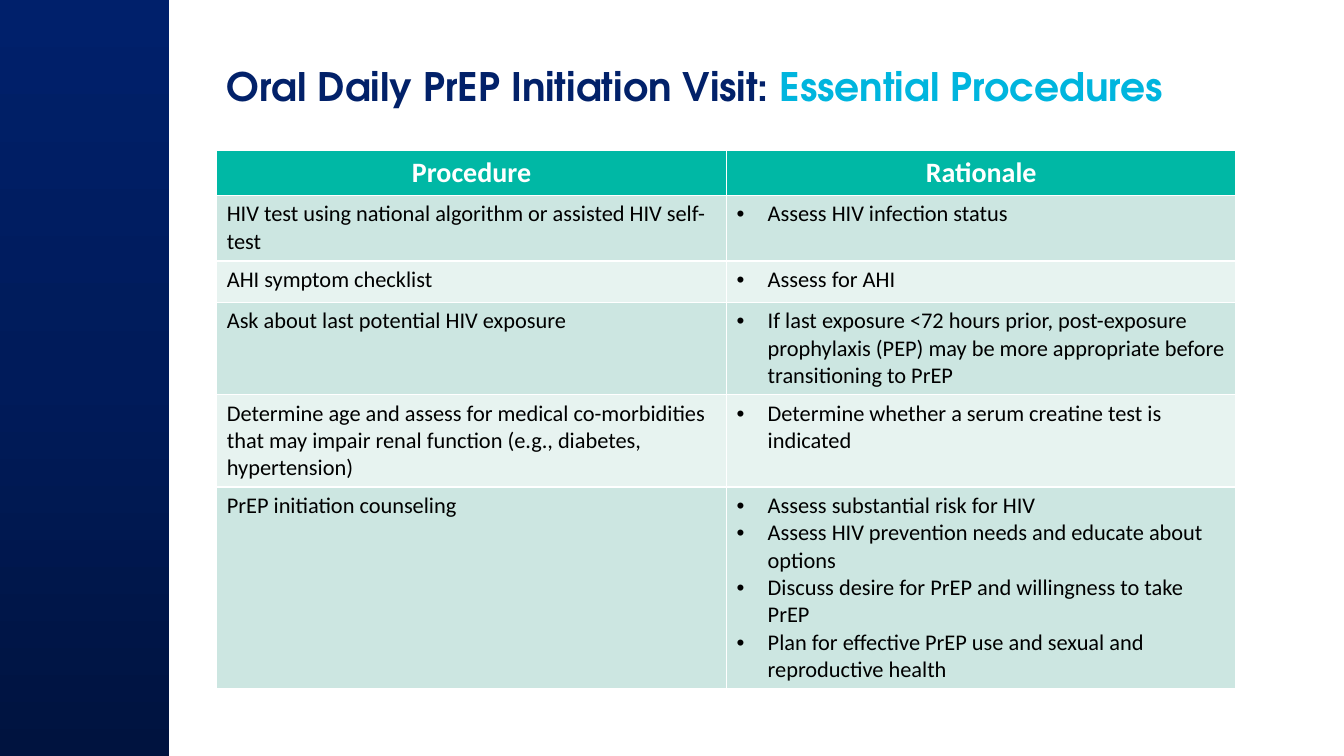
import copy
from dataclasses import dataclass

import pptx
import pptx.dml.color
import pptx.enum.shapes
import pptx.enum.text
import pptx.oxml
import pptx.oxml.ns
import pptx.util
from pptx.util import Inches

MSO_ANCHOR = pptx.enum.text.MSO_ANCHOR
PP_ALIGN = pptx.enum.text.PP_ALIGN


@dataclass(frozen=True)
class Theme:
    title_font: str = "TeX Gyre Adventor"
    body_font: str = "Calibri"
    title_size: int = 28
    header_size: int = 20
    body_size: int = 16
    navy: str = "022169"
    cyan: str = "00B5DE"
    teal: str = "00B8A5"
    white: str = "FFFFFF"
    black: str = "000000"
    bands: tuple = ("CCE6E1", "E7F3F0")
    sidebar: tuple = ("00133F", "001B5A", "00206B")


THEME = Theme()

TITLE = (
    ("Oral Daily PrEP Initiation Visit: ", THEME.navy),
    ("Essential Procedures", THEME.cyan),
)
HEADINGS = ("Procedure", "Rationale")
HEADER_HEIGHT = 0.45
# Procedure, rationales, row height in inches
PROCEDURES = (
    ("HIV test using national algorithm or assisted HIV self-test",
     ("Assess HIV infection status",), 0.65),
    ("AHI symptom checklist",
     ("Assess for AHI",), 0.41),
    ("Ask about last potential HIV exposure",
     ("If last exposure <72 hours prior, post-exposure prophylaxis (PEP) "
      "may be more appropriate before transitioning to PrEP",), 0.91),
    ("Determine age and assess for medical co-morbidities that may impair "
     "renal function (e.g., diabetes, hypertension)",
     ("Determine whether a serum creatine test is indicated",), 0.91),
    ("PrEP initiation counseling",
     ("Assess substantial risk for HIV",
      "Assess HIV prevention needs and educate about options",
      "Discuss desire for PrEP and willingness to take PrEP",
      "Plan for effective PrEP use and sexual and reproductive health"), 2.0),
)


def rgb(code):
    return pptx.dml.color.RGBColor.from_string(code)


def set_font(font, name, size, color, bold):
    font.name = name
    font.size = pptx.util.Pt(size)
    font.bold = bold
    font.color.rgb = rgb(color)


def add_sidebar(slide, height):
    sidebar = slide.shapes.add_shape(
        pptx.enum.shapes.MSO_SHAPE.RECTANGLE, 0, 0, Inches(1.68), height)
    sidebar.shadow.inherit = False
    sidebar.line.fill.background()
    sidebar.fill.gradient()
    sidebar.fill.gradient_angle = 90
    stop_list = sidebar.fill._fill._gradFill.gsLst
    stop_list.append(copy.deepcopy(stop_list[-1]))
    for stop, position, color in zip(
            sidebar.fill.gradient_stops, (0, 0.5, 1), THEME.sidebar):
        stop.position = position
        stop.color.rgb = rgb(color)


def set_title(slide):
    title = slide.shapes.title
    title.left, title.top = Inches(2.15), Inches(0.57)
    title.width, title.height = Inches(10), Inches(0.92)
    frame = title.text_frame
    frame.auto_size = pptx.enum.text.MSO_AUTO_SIZE.NONE
    frame.vertical_anchor = MSO_ANCHOR.TOP
    heading = frame.paragraphs[0]
    heading.alignment = PP_ALIGN.LEFT
    for words, color in TITLE:
        run = heading.add_run()
        run.text = words
        set_font(run.font, THEME.title_font, THEME.title_size, color, True)


def add_bullet(paragraph):
    properties = paragraph._p.get_or_add_pPr()
    properties.set("marL", str(Inches(0.31)))
    properties.set("indent", str(-Inches(0.31)))
    for tag, attribute, value in (("buFont", "typeface", "Arial"),
                                  ("buChar", "char", "•")):
        bullet = pptx.oxml.ns.qn(f"a:{tag}")
        properties.append(properties.makeelement(bullet, {attribute: value}))


def fill_cell(cell, fill, lines, size, color, bold=False, bulleted=False):
    cell.fill.solid()
    cell.fill.fore_color.rgb = rgb(fill)
    cell.text = "\n".join(lines)
    for paragraph in cell.text_frame.paragraphs:
        if bulleted:
            add_bullet(paragraph)
        set_font(paragraph.font, THEME.body_font, size, color, bold)


def add_procedure_table(slide):
    heights = [HEADER_HEIGHT] + [height for _, _, height in PROCEDURES]
    table = slide.shapes.add_table(
        len(heights), len(HEADINGS), Inches(2.15), Inches(1.49),
        Inches(10.11), Inches(sum(heights))).table
    for row, height in zip(table.rows, heights):
        row.height = Inches(height)

    for column, heading in enumerate(HEADINGS):
        cell = table.cell(0, column)
        fill_cell(cell, THEME.teal, [heading], THEME.header_size,
                  THEME.white, bold=True)
        cell.vertical_anchor = MSO_ANCHOR.MIDDLE
        cell.text_frame.paragraphs[0].alignment = PP_ALIGN.CENTER

    for index, (procedure, rationales, _) in enumerate(PROCEDURES):
        band = THEME.bands[index % 2]
        fill_cell(table.cell(index + 1, 0), band, [procedure],
                  THEME.body_size, THEME.black)
        fill_cell(table.cell(index + 1, 1), band, rationales,
                  THEME.body_size, THEME.black, bulleted=True)


def main():
    deck = pptx.Presentation()
    deck.slide_width, deck.slide_height = Inches(13.33), Inches(7.5)
    slide = deck.slides.add_slide(deck.slide_layouts.get_by_name("Title Only"))
    add_sidebar(slide, deck.slide_height)
    set_title(slide)
    add_procedure_table(slide)
    deck.save("out.pptx")


if __name__ == "__main__":
    main()
